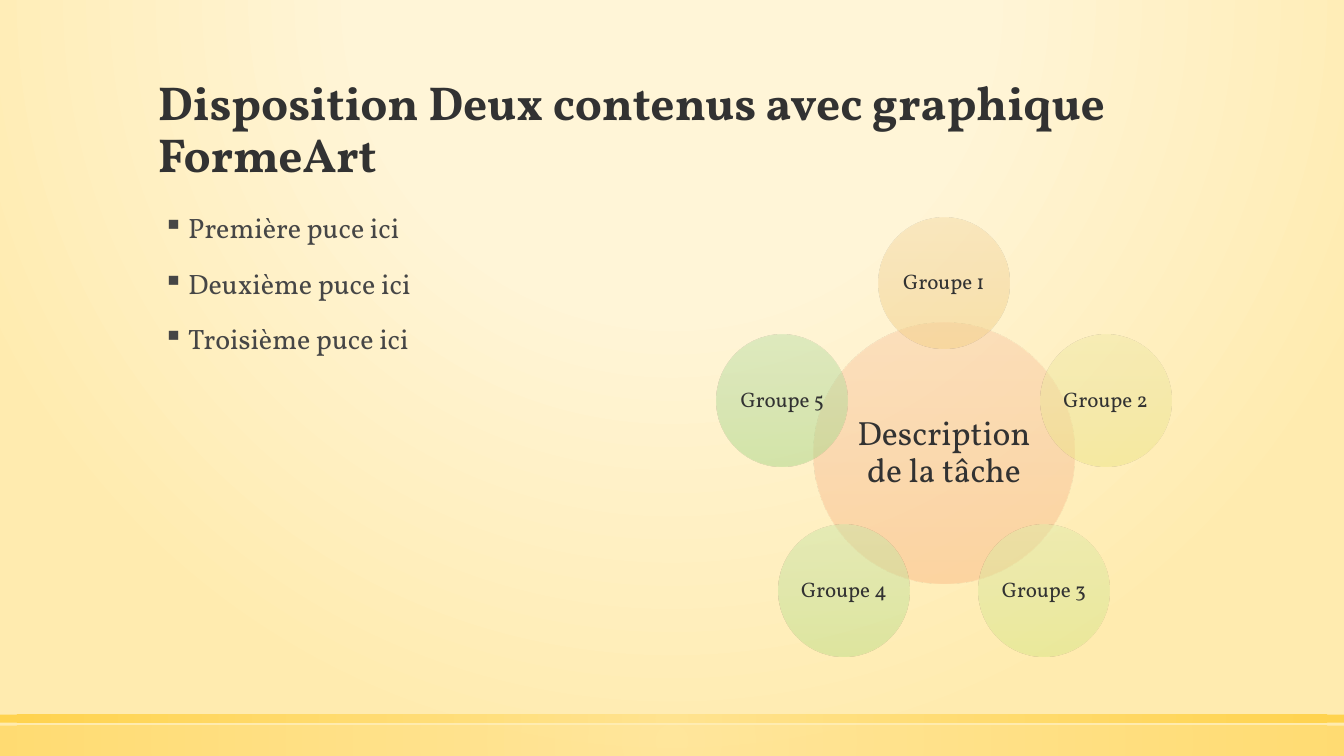
"""Build a slide with a bullet list and a radial diagram of five groups around a task."""
from dataclasses import dataclass
from math import cos, radians, sin

from lxml import etree
from pptx import Presentation
from pptx.dml.color import RGBColor
from pptx.enum.shapes import MSO_SHAPE
from pptx.enum.text import MSO_ANCHOR, PP_ALIGN
from pptx.oxml import parse_xml
from pptx.oxml.ns import nsdecls, qn
from pptx.util import Pt

RECTANGLE, ELLIPSE = MSO_SHAPE.RECTANGLE, MSO_SHAPE.OVAL
TOP, MIDDLE, BOTTOM = MSO_ANCHOR.TOP, MSO_ANCHOR.MIDDLE, MSO_ANCHOR.BOTTOM
LEFT, CENTER = PP_ALIGN.LEFT, PP_ALIGN.CENTER


@dataclass(frozen=True)
class Theme:
    """Fonts, colours and type sizes of the slide."""
    font: str = "Vollkorn"
    dark: str = "323232"
    body: str = "464646"
    title_size: int = 34
    bullet_size: int = 20
    task_size: int = 24
    group_size: int = 15
    backdrop: tuple = ((0, "FFF5D7", 59), (40, "FFF5D7", 66), (100, "FFEBAF", 100))
    band: tuple = ("FFE186", "FFCD36")
    task: tuple = ("FACDA9", "F8C39A", "FBBB87")
    groups: tuple = (
        ("F6DBA8", "F3D49A", "F5D187"),
        ("F1EAA8", "EDE59A", "EEE587"),
        ("E0EBA8", "DAE79A", "D8E787"),
        ("CDE6A8", "C5E19A", "BEE088"),
        ("BFE0A9", "B4DA9B", "A9D889"),
    )


def even_stops(colors, opacity):
    """Spread colours evenly over a gradient at one opacity."""
    return [(100 * i / (len(colors) - 1), color, opacity) for i, color in enumerate(colors)]


def apply_gradient(fill, owner, stops, focus=None):
    """Fill with a vertical gradient, or a circular one around a focus rectangle."""
    fill.gradient()
    marks = "".join(
        f'<a:gs pos="{int(position * 1000)}"><a:srgbClr val="{color}">'
        f'<a:alpha val="{opacity * 1000}"/></a:srgbClr></a:gs>'
        for position, color, opacity in stops)
    direction = '<a:lin ang="5400000" scaled="0"/>'
    if focus:
        sides = " ".join(f'{side}="{value * 1000}"' for side, value in zip("ltrb", focus))
        direction = f'<a:path path="circle"><a:fillToRect {sides}/></a:path>'
    gradient = parse_xml(f'<a:gradFill {nsdecls("a")} rotWithShape="1">'
                         f'<a:gsLst>{marks}</a:gsLst>{direction}</a:gradFill>')
    default = owner.find(".//" + qn("a:gradFill"))
    default.getparent().replace(default, gradient)


class SlideBuilder:
    """Hold the theme and the current slide, and draw its elements."""

    def __init__(self, slide, theme):
        self.slide = slide
        self.theme = theme

    def background(self):
        """Paint the slide background."""
        apply_gradient(self.slide.background.fill, self.slide._element,
                       self.theme.backdrop, (50, -80, 50, 180))

    def shape(self, preset, box, stops, focus=None):
        """Draw a borderless gradient shape."""
        shape = self.slide.shapes.add_shape(preset, *map(Pt, box))
        shape.shadow.inherit = False
        shape.line.fill.background()
        apply_gradient(shape.fill, shape._element, stops, focus)
        return shape

    def paragraphs(self, frame, lines, size, color, anchor=TOP, align=LEFT, bold=False, gap=0,
                   bullet=None):
        """Set paragraphs in a text frame."""
        frame.word_wrap = True
        frame.vertical_anchor = anchor
        for index, line in enumerate(lines):
            paragraph = frame.add_paragraph() if index else frame.paragraphs[0]
            if bullet:
                properties = paragraph._p.get_or_add_pPr()
                properties.set("marL", str(Pt(21.6)))
                properties.set("indent", str(Pt(-18)))
                etree.SubElement(properties, qn("a:buChar"), char=bullet)
            layout = {"alignment": align, "line_spacing": 0.9,
                      "space_before": Pt(gap if index else 0)}
            for name, value in layout.items():
                setattr(paragraph, name, value)
            run = paragraph.add_run()
            run.text = line
            for name, value in {"name": self.theme.font, "size": Pt(size), "bold": bold}.items():
                setattr(run.font, name, value)
            run.font.color.rgb = RGBColor.from_string(color)

    def text(self, box, lines, size, color, **layout):
        """Place a text box."""
        frame = self.slide.shapes.add_textbox(*map(Pt, box)).text_frame
        self.paragraphs(frame, lines, size, color, **layout)

    def circle(self, center, diameter, colors, label, size, inset):
        """Draw a labelled translucent circle around a centre point."""
        x, y = center
        box = (x - diameter / 2, y - diameter / 2, diameter, diameter)
        frame = self.shape(ELLIPSE, box, even_stops(colors, 50)).text_frame
        for side in ("left", "top", "right", "bottom"):
            setattr(frame, f"margin_{side}", Pt(inset))
        self.paragraphs(frame, [label], size, self.theme.dark, anchor=MIDDLE, align=CENTER)


def main():
    """Build and save the slide."""
    theme = Theme()
    deck = Presentation()
    deck.slide_width, deck.slide_height = Pt(960), Pt(540)
    builder = SlideBuilder(deck.slides.add_slide(deck.slide_layouts[6]), theme)

    builder.background()
    for top, height, opacity in ((518.4, 21.6, 50), (510.4, 5.8, 80)):
        builder.shape(RECTANGLE, (0, top, 960, height), even_stops(theme.band, opacity),
                      (50, 50, 50, 50))

    builder.text((105.8, 36.7, 748.8, 97.2),
                 ["Disposition Deux contenus avec graphique FormeArt"],
                 theme.title_size, theme.dark, anchor=BOTTOM, bold=True)
    builder.text((105.8, 149.8, 360, 324.7),
                 ["Première puce ici", "Deuxième puce ici", "Troisième puce ici"],
                 theme.bullet_size, theme.body, gap=18, bullet="▪")

    task_x, task_y = 674.3, 323.7
    orbit = 121.4
    builder.circle((task_x, task_y), 186.8, theme.task, "Description de la tâche",
                   theme.task_size, 2.4)
    for index, colors in enumerate(theme.groups):
        angle = radians(360 / len(theme.groups) * index - 90)
        center = (task_x + orbit * cos(angle), task_y + orbit * sin(angle))
        builder.circle(center, 93.6, colors, f"Groupe {index + 1}", theme.group_size, 1.5)

    deck.save("out.pptx")


if __name__ == "__main__":
    main()
